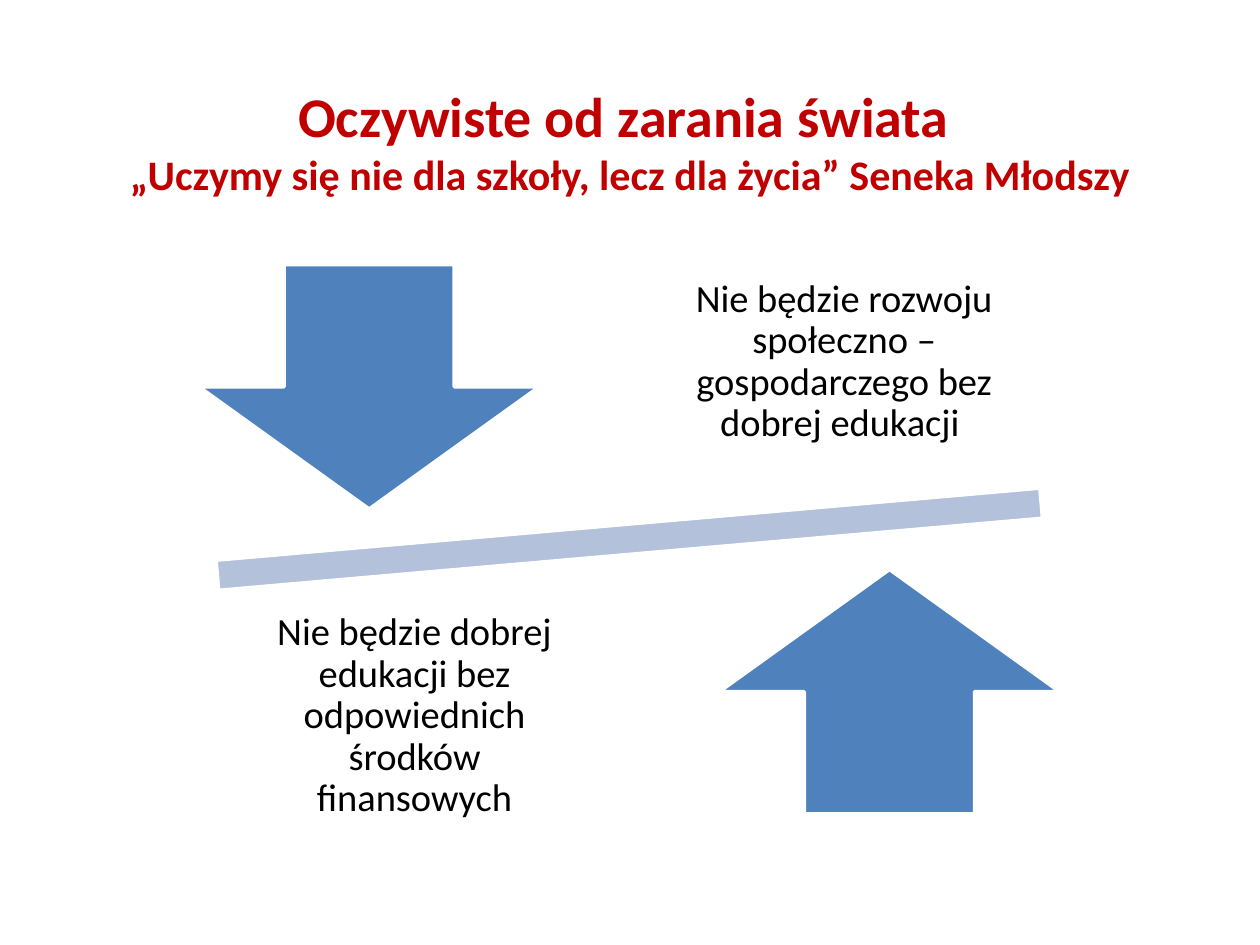
import collections

import pptx
import pptx.dml.color
import pptx.enum.shapes
import pptx.enum.text
import pptx.util

COLORS = {"title": "C00000", "arrow": "4F81BD", "beam": "B3C1DB",
          "outline": "FFFFFF", "body": "000000"}
FONT = "Calibri"
COLUMNS, ROWS = 100, 75
CELL = pptx.util.Inches(0.1)
SHAPE = pptx.enum.shapes.MSO_SHAPE

Box = collections.namedtuple("Box", "left top width height")
TITLE_BOX = Box(5.1, 4.4, 89.8, 13.4)
SEESAW_BOX = Box(5.3, 18.6, 89.3, 48.4)

TITLE = ["Oczywiste od zarania świata ",
         "„Uczymy się nie dla szkoły, lecz dla życia” Seneka Młodszy"]
UPPER_CLAIM = "Nie będzie rozwoju społeczno – gospodarczego bez dobrej edukacji "
LOWER_CLAIM = "Nie będzie dobrej edukacji bez odpowiednich środków finansowych"


def rgb(name):
    return pptx.dml.color.RGBColor.from_string(COLORS[name])


def cells(box):
    return [round(length * CELL) for length in box]


def centred(box, dx, dy, width, height):
    """Return a box whose centre is dx, dy away from the centre of the given box."""
    return Box(box.left + box.width / 2 + dx - width / 2,
               box.top + box.height / 2 + dy - height / 2, width, height)


def add_text(slide, box, text, sizes, color, bold=False, inset=None):
    frame = slide.shapes.add_textbox(*cells(box)).text_frame
    frame.word_wrap = True
    frame.vertical_anchor = pptx.enum.text.MSO_ANCHOR.MIDDLE
    if inset is not None:
        frame.margin_left = frame.margin_right = inset
        frame.margin_top = frame.margin_bottom = inset
    paragraph = frame.paragraphs[0]
    paragraph.text = text
    paragraph.alignment = pptx.enum.text.PP_ALIGN.CENTER
    for run, size in zip(paragraph.runs, sizes):
        run.font.name = FONT
        run.font.size = pptx.util.Pt(size)
        run.font.bold = bold
        run.font.color.rgb = rgb(color)
    return paragraph


def add_solid(slide, preset, box, color, rotation=0):
    solid = slide.shapes.add_shape(preset, *cells(box))
    solid.shadow.inherit = False
    solid.rotation = rotation
    solid.fill.solid()
    solid.fill.fore_color.rgb = rgb(color)
    solid.line.color.rgb = rgb("outline")
    solid.line.width = pptx.util.Pt(2)


def add_title(slide, box):
    add_text(slide, box, "\v".join(TITLE), (32, 24), "title", bold=True)


def add_seesaw(slide, box):
    """Draw a tilted beam with an arrow and a claim on each side, mirrored about its centre."""
    add_solid(slide, SHAPE.MATH_MINUS, centred(box, 0, 0, box.width, 10.2), "beam", 355)
    sides = [(-1, SHAPE.DOWN_ARROW, UPPER_CLAIM), (1, SHAPE.UP_ARROW, LOWER_CLAIM)]
    for side, arrow, claim in sides:
        add_solid(slide, arrow, centred(box, side * 20.65, side * 12.1, 27, 19.4), "arrow")
        paragraph = add_text(slide, centred(box, -side * 17.05, side * 14.05, 28.8, 20.3),
                             claim, [22], "body", inset=pptx.util.Inches(0.17))
        paragraph.line_spacing = 0.9


def main():
    deck = pptx.Presentation()
    deck.slide_width, deck.slide_height = COLUMNS * CELL, ROWS * CELL
    slide = deck.slides.add_slide(deck.slide_layouts[6])
    add_title(slide, TITLE_BOX)
    add_seesaw(slide, SEESAW_BOX)
    deck.save("out.pptx")


if __name__ == "__main__":
    main()
